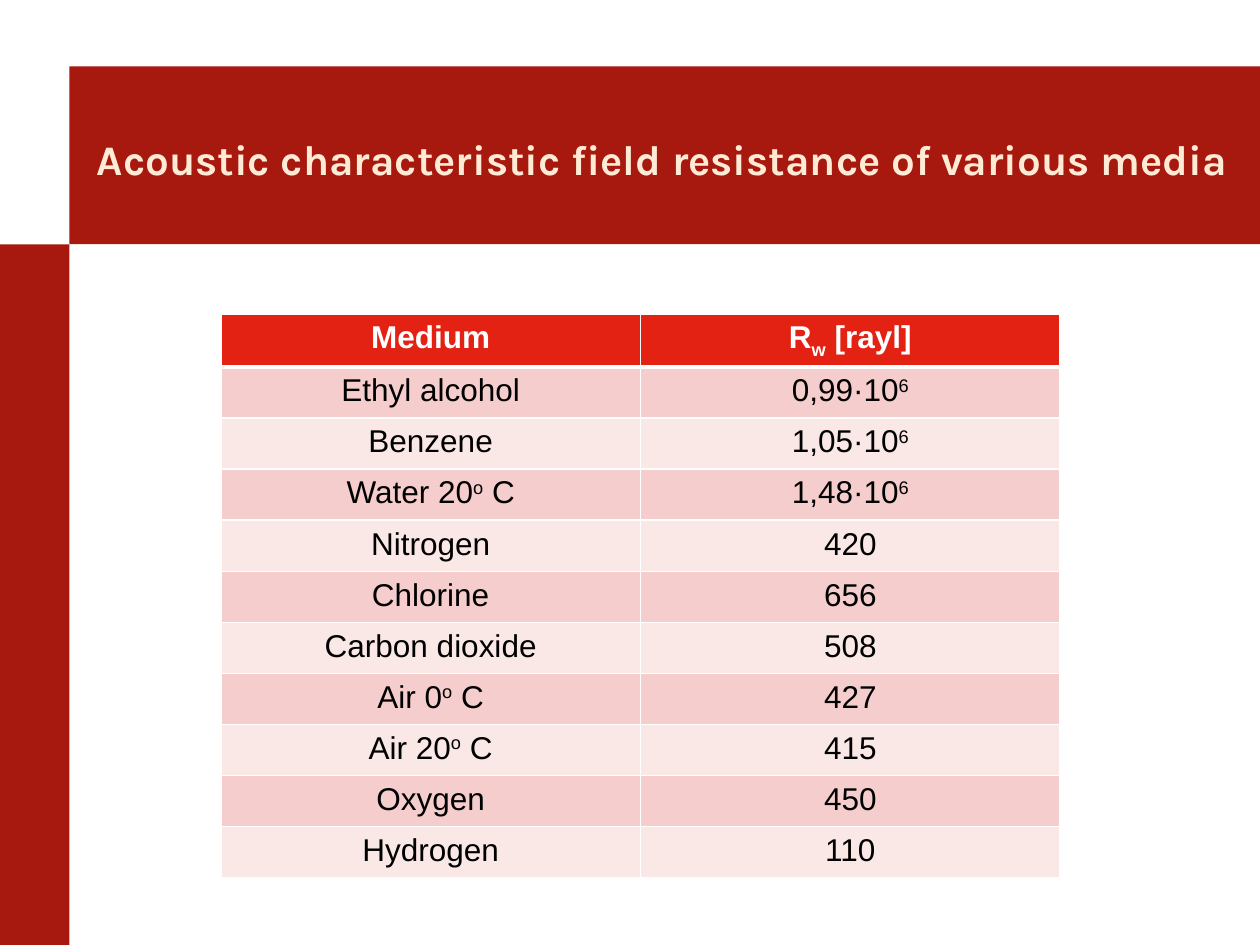
from lxml import etree
from pptx import Presentation
from pptx import util as u
from pptx.dml.color import RGBColor
from pptx.enum import shapes, text
from pptx.oxml import ns

DARK_RED = "A7190E"
HEADER_RED = "E32213"
BANDS = ("F4CDCC", "FAE8E7")
SUBSCRIPT, SUPERSCRIPT = -25, 30
ROWS = [
    ("Medium", "R|w| [rayl]"),
    ("Ethyl alcohol", "0,99·10|6"),
    ("Benzene", "1,05·10|6"),
    ("Water 20|o| C", "1,48·10|6"),
    ("Nitrogen", "420"),
    ("Chlorine", "656"),
    ("Carbon dioxide", "508"),
    ("Air 0|o| C", "427"),
    ("Air 20|o| C", "415"),
    ("Oxygen", "450"),
    ("Hydrogen", "110"),
]


def paint(fill, color):
    """Make a fill solid in a hex colour."""
    fill.solid()
    fill.fore_color.rgb = RGBColor.from_string(color)


def add_span(para, words, font, size, color, bold=False, shift=0):
    """Add one run, raised or lowered by a percentage."""
    span = para.add_run()
    span.text = words
    span.font.name = font
    span.font.size = u.Pt(size)
    span.font.bold = bold
    span.font.color.rgb = RGBColor.from_string(color)
    if shift:
        span.font._element.set("baseline", str(shift * 1000))


def add_bar(page, left, top, width, height):
    """Add a plain dark red bar."""
    bar = page.shapes.add_shape(
        shapes.MSO_SHAPE.RECTANGLE, u.Pt(left), u.Pt(top), u.Pt(width), u.Pt(height))
    bar.shadow.inherit = False
    paint(bar.fill, DARK_RED)
    bar.line.fill.background()


def set_title(page, words):
    """Place and format the title in front of the bars."""
    title = page.shapes.title
    page.shapes.element.append(title.element)
    title.left, title.top = u.Pt(48.2), u.Pt(49.7)
    title.width, title.height = u.Pt(663.3), u.Pt(81.4)
    frame = title.text_frame
    frame.word_wrap = True
    frame.auto_size = text.MSO_AUTO_SIZE.NONE
    frame.vertical_anchor = text.MSO_ANCHOR.MIDDLE
    para = frame.paragraphs[0]
    para.alignment = text.PP_ALIGN.LEFT
    add_span(para, words, "Karla", 24, "FFEBD5", bold=True)


def set_borders(cell, top=1, bottom=1):
    """Draw white lines on all four sides of a cell."""
    properties = cell._tc.get_or_add_tcPr()
    for side, width in (("L", 1), ("R", 1), ("T", top), ("B", bottom)):
        line = etree.SubElement(properties, ns.qn(f"a:ln{side}"), w=str(u.Pt(width)))
        fill = etree.SubElement(line, ns.qn("a:solidFill"))
        etree.SubElement(fill, ns.qn("a:srgbClr"), val="FFFFFF")


def fill_cell(cell, words, row):
    """Format a cell; every second piece of its text is shifted."""
    header = row == 0
    set_borders(cell, top=3 if row == 1 else 1, bottom=3 if header else 1)
    paint(cell.fill, HEADER_RED if header else BANDS[(row - 1) % 2])
    para = cell.text_frame.paragraphs[0]
    para.alignment = text.PP_ALIGN.CENTER
    shift = SUBSCRIPT if header else SUPERSCRIPT
    for index, piece in enumerate(words.split("|")):
        add_span(para, piece, "Arial", 18, "FFFFFF" if header else "000000",
                 bold=header, shift=shift * (index % 2))


def add_media_table(page):
    """Add the table of media and their resistances."""
    table = page.shapes.add_table(
        len(ROWS), 2, u.Pt(126.2), u.Pt(179.4), u.Pt(479.6), u.Pt(29.2 * len(ROWS))).table
    for row, values in enumerate(ROWS):
        table.rows[row].height = u.Pt(29.2)
        for column, words in enumerate(values):
            fill_cell(table.cell(row, column), words, row)


def main():
    """Build and save the slide."""
    deck = Presentation()
    deck.slide_width, deck.slide_height = u.Pt(720), u.Pt(540)
    page = deck.slides.add_slide(deck.slide_layouts[5])
    add_bar(page, 39.6, 38, 680.4, 101.6)
    add_bar(page, 0, 139.6, 39.6, 400.4)
    set_title(page, "Acoustic characteristic field resistance of various media")
    add_media_table(page)
    deck.save("out.pptx")


if __name__ == "__main__":
    main()
